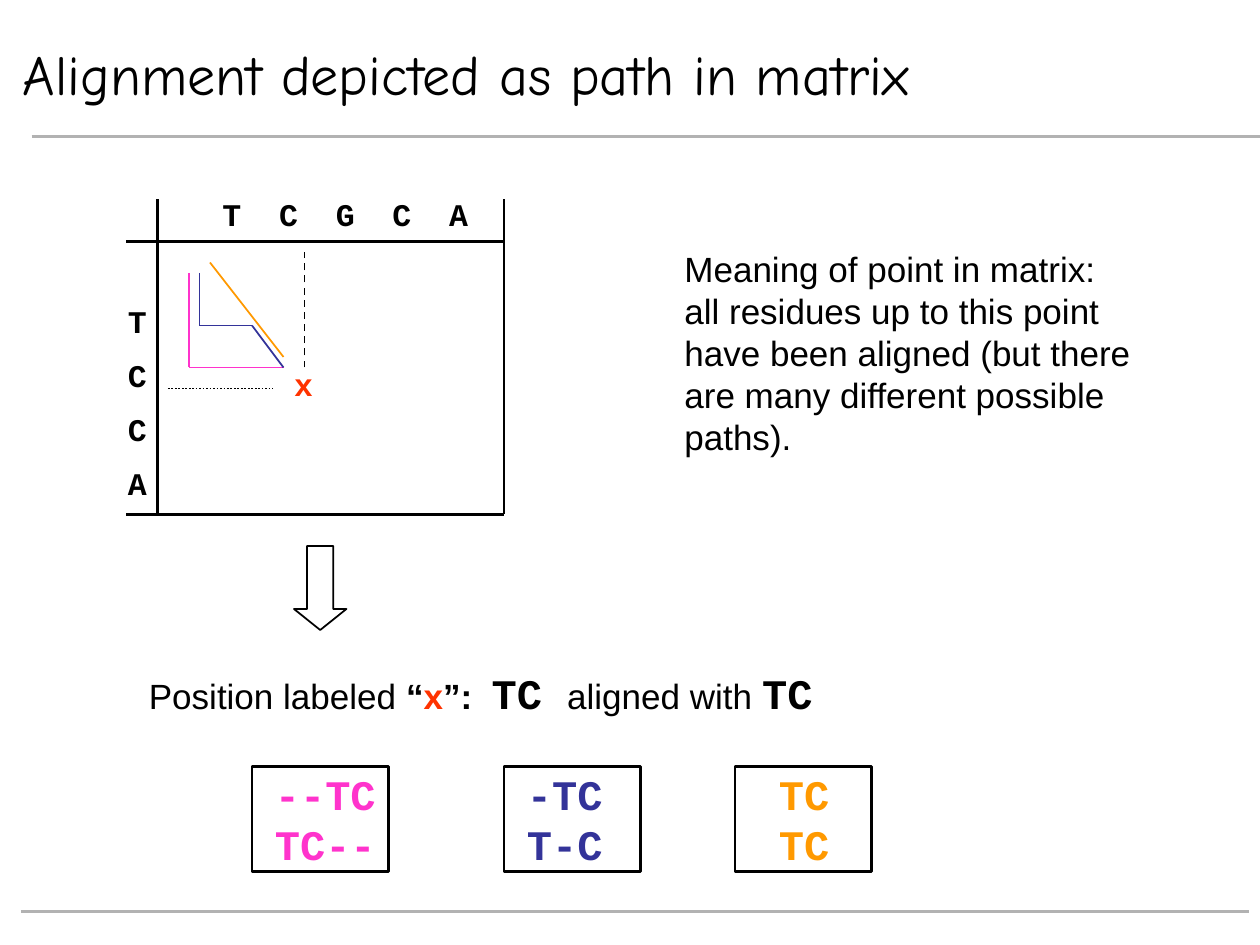
from dataclasses import dataclass
from itertools import pairwise

from lxml import etree
from pptx import Presentation, util as u
from pptx.dml.color import RGBColor
from pptx.enum import dml, shapes, text
from pptx.oxml.ns import qn

COLORS = {"black": "000000", "white": "FFFFFF", "rule": "B2B2B2", "red": "FF3300",
          "pink": "FF33CC", "blue": "333399", "orange": "FF9900"}
SANS, MONO, TITLE = "Arial", "Courier New", "Comic Neue"
COLUMNS, ROWS = 120, 90  # grid cells across and down the slide


@dataclass
class Polyline:
    points: list[tuple[float, float]]
    color: str = "black"
    width: float = 1
    dash: dml.MSO_LINE | None = None


@dataclass
class Run:
    words: str
    size: float = 24
    font: str = MONO
    bold: bool = True
    color: str = "black"


presentation = Presentation()
presentation.slide_width, presentation.slide_height = u.Inches(10), u.Inches(7.5)
slide = presentation.slides.add_slide(presentation.slide_layouts[6])


def across(columns: float) -> int:
    return round(presentation.slide_width * columns / COLUMNS)


def down(rows: float) -> int:
    return round(presentation.slide_height * rows / ROWS)


def color(name: str) -> RGBColor:
    return RGBColor.from_string(COLORS[name])


def draw_polyline(polyline: Polyline) -> None:
    for (x1, y1), (x2, y2) in pairwise(polyline.points):
        line = slide.shapes.add_connector(
            shapes.MSO_CONNECTOR.STRAIGHT, across(x1), down(y1), across(x2), down(y2))
        line.line.color.rgb = color(polyline.color)
        line.line.width = u.Pt(polyline.width)
        if polyline.dash:
            line.line.dash_style = polyline.dash
        etree.SubElement(line._element.spPr, qn("a:effectLst"))


def draw_outline(kind, left: float, top: float, width: float, height: float, weight: float):
    shape = slide.shapes.add_shape(kind, across(left), down(top), across(width), down(height))
    shape.shadow.inherit = False
    shape.fill.background()
    shape.line.color.rgb = color("black")
    shape.line.width = u.Pt(weight)
    return shape


def add_text_frame(left: float, top: float, width: float, height: float, wrap: bool = True):
    box = slide.shapes.add_textbox(across(left), down(top), across(width), down(height))
    box.text_frame.word_wrap = wrap
    return box.text_frame


def style(font, run: Run) -> None:
    font.name, font.size, font.bold = run.font, u.Pt(run.size), run.bold
    font.color.rgb = color(run.color)


def set_tabs(paragraph, inches: list[float]) -> None:
    tabs = etree.SubElement(paragraph._p.get_or_add_pPr(), qn("a:tabLst"))
    for position in inches:
        etree.SubElement(tabs, qn("a:tab"), pos=str(u.Inches(position)), algn="l")


def write(paragraph, *runs: Run, leading: float | None = None, before: float = 0) -> None:
    """Fill a paragraph; one run styles the paragraph, several style themselves."""
    if leading:
        paragraph.line_spacing = u.Pt(leading)
    if before:
        paragraph.space_before = u.Pt(before)
    for run in runs:
        part = paragraph.add_run()
        part.text = run.words
        style(paragraph.font if len(runs) == 1 else part.font, run)


# Title and slide rules
draw_polyline(Polyline([(3, 13), (120, 13)], "rule", 1.5))
draw_polyline(Polyline([(2, 86.8), (119, 86.8)], "rule", 1.5))
title = add_text_frame(1, 4, 94, 6)
title.vertical_anchor = text.MSO_ANCHOR.MIDDLE
write(title.paragraphs[0], Run("Alignment depicted as path in matrix", 32, TITLE, False))

# Matrix labels
labels = add_text_frame(11, 18, 39, 32)
header = labels.paragraphs[0]
set_tabs(header, [0.75 + 0.45 * i for i in range(5)])
write(header, Run("".join("\t" + residue for residue in "TCGCA"), 18), leading=21.6)
for index, residue in enumerate("TCCA"):
    write(labels.add_paragraph(), Run(residue, 18), leading=21.6,
          before=9.2 if index else 39.5)

# Matrix frame, guides to the marked point and the three paths
LEFT, RIGHT, TOP, BOTTOM = 12, 48, 19, 49
for row in (23, BOTTOM):
    draw_polyline(Polyline([(LEFT, row), (RIGHT, row)], width=1.5))
for column in (15, RIGHT):
    draw_polyline(Polyline([(column, TOP), (column, BOTTOM)], width=1.5))
for path_line in (
    Polyline([(16, 37), (26, 37)], dash=dml.MSO_LINE.ROUND_DOT),
    Polyline([(29, 35), (29, 24)], dash=dml.MSO_LINE.DASH),
    Polyline([(18, 26), (18, 35), (27, 35)], "pink"),
    Polyline([(19, 26), (19, 31), (24, 31), (27, 35)], "blue"),
    Polyline([(20, 25), (27, 34)], "orange"),
):
    draw_polyline(path_line)

marker = add_text_frame(26.8, 34.2, 4.2, 4.8, wrap=False).paragraphs[0]
marker.alignment = text.PP_ALIGN.CENTER
write(marker, Run("x", 18, color="red"))

# Explanation
meaning = add_text_frame(64, 23, 45.6, 33.2)
write(meaning.paragraphs[0], Run(
    "Meaning of point in matrix: all residues up to this point have been aligned "
    "(but there are many different possible paths).", 20, SANS, False), leading=24)

# Alignments
arrow = draw_outline(shapes.MSO_SHAPE.DOWN_ARROW, 28, 52, 5, 8, 1)
arrow.adjustments[0], arrow.adjustments[1] = 0.5, 0.4
for column in (24, 48, 70):
    draw_outline(shapes.MSO_SHAPE.RECTANGLE, column, 73, 13, 10, 1.5)

alignments = add_text_frame(13, 63, 95, 25.2)
position = alignments.paragraphs[0]
set_tabs(position, [2.72])
write(position,
      Run("Position labeled ", 20, SANS, False), Run("“", 20, SANS),
      Run("x", 20, SANS, color="red"), Run("”:\t", 20, SANS), Run("TC "),
      Run("aligned with ", 20, SANS, False), Run("TC"), leading=28.8)
for words, before in ((("--TC", "-TC", "TC"), 28.8), (("TC--", "T-C", "TC"), 0)):
    paragraph = alignments.add_paragraph()
    set_tabs(paragraph, [1, 3, 5])
    write(paragraph, *(Run("\t" + word, color=name)
                       for word, name in zip(words, ("pink", "blue", "orange"))),
          leading=28.8, before=before)

presentation.save("out.pptx")
